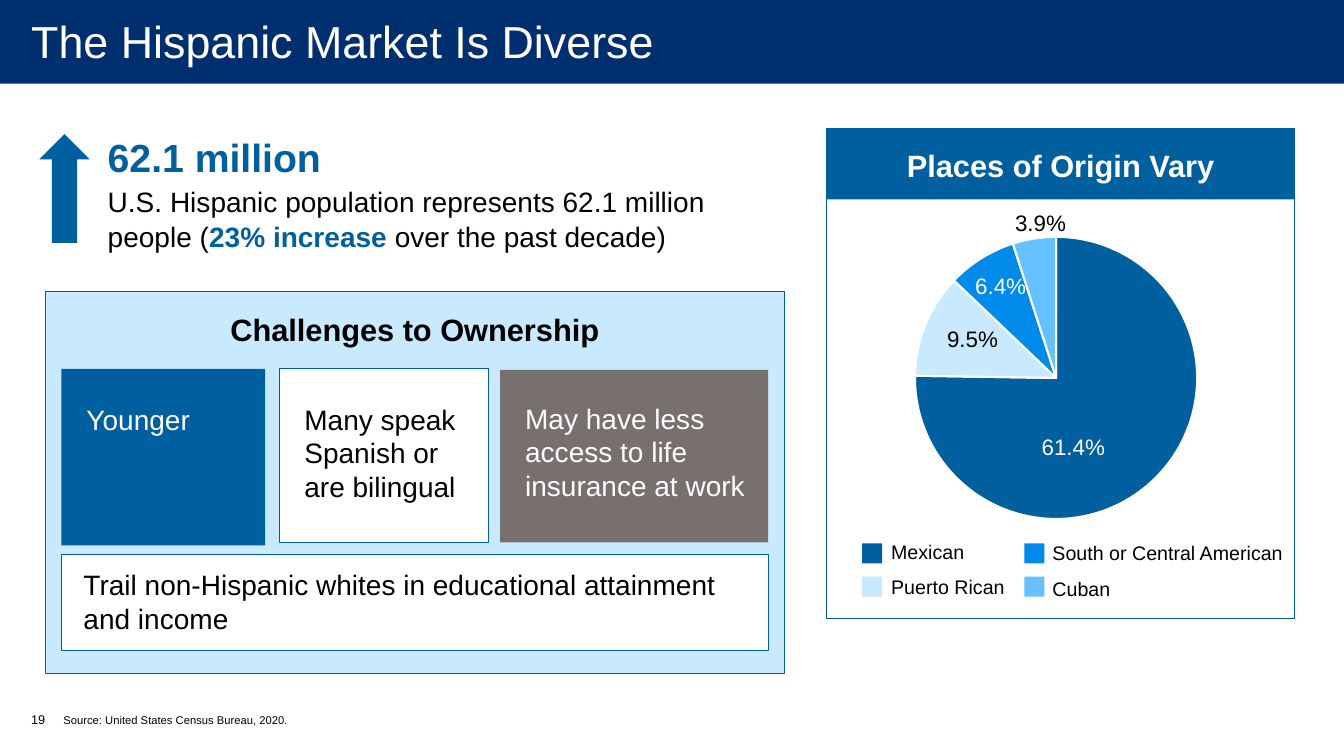
from lxml.etree import SubElement
from pptx import Presentation
from pptx.chart.data import CategoryChartData
from pptx.dml.color import RGBColor
from pptx.enum.chart import XL_CHART_TYPE
from pptx.enum.shapes import MSO_SHAPE
from pptx.enum.text import MSO_ANCHOR, PP_ALIGN
from pptx.oxml.ns import qn
from pptx.util import Inches, Pt

NAVY, BLUE, PALE, BRIGHT, SKY = "002F70", "005F9F", "C9E9FF", "008BEA", "65C1FF"
GRAY, WHITE, BLACK = "77706E", "FFFFFF", "000000"


def color(value):
    return RGBColor.from_string(value)


def add_span(para, text, size=20, fill=BLACK, bold=False):
    span = para.add_run()
    span.text = text
    span.font.name = "Arial"
    span.font.size = Pt(size)
    span.font.bold = bold
    span.font.color.rgb = color(fill)


class SlideBuilder:
    def __init__(self, page):
        self.page = page

    def shape(self, left, top, width, height, fill=None, line=None,
              kind=MSO_SHAPE.RECTANGLE, rotation=0):
        box = self.page.shapes.add_shape(
            kind, Inches(left), Inches(top), Inches(width), Inches(height))
        box.shadow.inherit = False
        box.rotation = rotation
        if fill:
            box.fill.solid()
            box.fill.fore_color.rgb = color(fill)
        else:
            box.fill.background()
        if line:
            box.line.color.rgb = color(line)
            box.line.width = Pt(0.75)
        else:
            box.line.fill.background()
        return box

    def text(self, left, top, width, height, text="", align=PP_ALIGN.LEFT,
             anchor=MSO_ANCHOR.TOP, wrap=True, side=0.1, inset=0.05, **style):
        box = self.page.shapes.add_textbox(
            Inches(left), Inches(top), Inches(width), Inches(height))
        frame = box.text_frame
        frame.word_wrap = wrap
        frame.vertical_anchor = anchor
        frame.margin_left = frame.margin_right = Inches(side)
        frame.margin_top = frame.margin_bottom = Inches(inset)
        para = frame.paragraphs[0]
        para.alignment = align
        add_span(para, text, **style)
        return frame

    def pie(self, left, top, width, height, values, fills, diameter):
        data = CategoryChartData()
        data.categories = [str(number + 1) for number in range(len(values))]
        data.add_series("Series 1", values)
        chart = self.page.shapes.add_chart(
            XL_CHART_TYPE.PIE, Inches(left), Inches(top),
            Inches(width), Inches(height), data).chart
        chart.has_legend = False
        chart.has_title = False
        chart.font.name = "Arial"
        chart.font.size = Pt(10)
        chart.font.color.rgb = color(BLACK)
        plot = chart.plots[0]
        plot.vary_by_categories = True
        for index, fill in enumerate(fills):
            style = plot.series[0].points[index].format
            style.fill.solid()
            style.fill.fore_color.rgb = color(fill)
            style.line.color.rgb = color(WHITE)
            style.line.width = Pt(1.5)
        area = chart.element.find(".//" + qn("c:plotArea"))
        layout = area.find(qn("c:layout"))
        if layout is None:
            layout = SubElement(area, qn("c:layout"))
            area.insert(0, layout)
        manual = SubElement(layout, qn("c:manualLayout"))
        share_x, share_y = diameter / width, diameter / height
        settings = [("layoutTarget", "inner"), ("xMode", "edge"), ("yMode", "edge"),
                    ("x", (1 - share_x) / 2), ("y", (1 - share_y) / 2),
                    ("w", share_x), ("h", share_y)]
        for name, value in settings:
            SubElement(manual, qn("c:" + name)).set("val", str(value))


def build_population(slide):
    slide.shape(0.1, 1.62, 1.08, 0.5, BLUE, kind=MSO_SHAPE.RIGHT_ARROW, rotation=270)
    frame = slide.text(0.97, 1.27, 6.25, 1.3, "62.1 million",
                       size=28, fill=BLUE, bold=True)
    para = frame.add_paragraph()
    para.line_spacing = Pt(25)
    para.space_before = Pt(2)
    add_span(para, "U.S. Hispanic population represents 62.1 million people (")
    add_span(para, "23% increase ", fill=BLUE, bold=True)
    add_span(para, "over the past decade)")


def build_challenges(slide):
    slide.shape(0.45, 2.89, 7.33, 3.79, PALE, BLUE)
    slide.text(0.56, 3.03, 7.11, 0.47, "Challenges to Ownership",
               align=PP_ALIGN.CENTER, size=22, bold=True)
    cards = [
        ((0.61, 3.66, 2.02, 1.75), BLUE, None,
         (0.76, 3.99, 1.77, 0.4), "Younger", WHITE, 0),
        ((2.77, 3.66, 2.08, 1.72), WHITE, BLUE,
         (2.92, 3.99, 1.92, 1.13), "Many speak Spanish or are bilingual", BLACK, 0),
        ((4.96, 3.67, 2.66, 1.71), GRAY, None,
         (5.11, 3.93, 2.45, 1.29), "May have less access to life insurance at work",
         WHITE, 0.05),
        ((0.61, 5.5, 7.01, 0.95), WHITE, BLUE, (0.73, 5.63, 6.84, 0.64),
         "Trail non-Hispanic whites in educational attainment and income", BLACK, 0),
    ]
    for card, fill, line, label, text, ink, inset in cards:
        slide.shape(*card, fill, line)
        slide.text(*label, text, fill=ink, inset=inset)


def build_origins(slide):
    slide.pie(8.2, 2.21, 4.55, 3.08, (76, 12, 8, 5), (BLUE, PALE, BRIGHT, SKY), 2.8)
    shares = [("61.4%", 10.14, 4.25, 1.01, WHITE), ("9.5%", 9.29, 3.18, 0.71, BLACK),
              ("6.4%", 9.41, 2.65, 1.03, WHITE), ("3.9%", 9.82, 2.03, 1, BLACK)]
    for text, left, top, width, ink in shares:
        slide.text(left, top, width, 0.37, text, align=PP_ALIGN.CENTER,
                   size=16, fill=ink)
    legend = [("Mexican", BLUE, 8.55, 5.39, 8.74, 5.31, 0.93),
              ("Puerto Rican", PALE, 8.55, 5.72, 8.74, 5.65, 1.33),
              ("South or Central American", BRIGHT, 10.16, 5.39, 10.34, 5.32, 2.5),
              ("Cuban", SKY, 10.16, 5.72, 10.34, 5.67, 0.78)]
    for name, fill, key_left, key_top, left, top, width in legend:
        slide.shape(key_left, key_top, 0.2, 0.2, fill)
        slide.text(left, top, width, 0.34, name, wrap=False, size=14)
    slide.shape(8.2, 1.28, 4.64, 0.7, BLUE)
    slide.shape(8.2, 1.28, 4.64, 4.86, line=BLUE)
    slide.text(8.2, 1.41, 4.64, 0.47, "Places of Origin Vary",
               align=PP_ALIGN.CENTER, size=22, fill=WHITE, bold=True)


def main():
    deck = Presentation()
    deck.slide_width = Inches(13.33)
    deck.slide_height = Inches(7.5)
    slide = SlideBuilder(deck.slides.add_slide(deck.slide_layouts[6]))
    slide.shape(0, -0.03, 13.33, 0.86, NAVY)
    slide.text(0.01, -0.08, 13.33, 0.97, "The Hispanic Market Is Diverse",
               anchor=MSO_ANCHOR.MIDDLE, side=0.3, inset=0, size=32, fill=WHITE)
    build_population(slide)
    build_challenges(slide)
    build_origins(slide)
    slide.text(0.21, 7.01, 0.49, 0.4, "19", size=9)
    slide.text(0.53, 6.87, 5.85, 0.39, "Source: United States Census Bureau, 2020.",
               anchor=MSO_ANCHOR.BOTTOM, size=8)
    deck.save("out.pptx")


if __name__ == "__main__":
    main()
